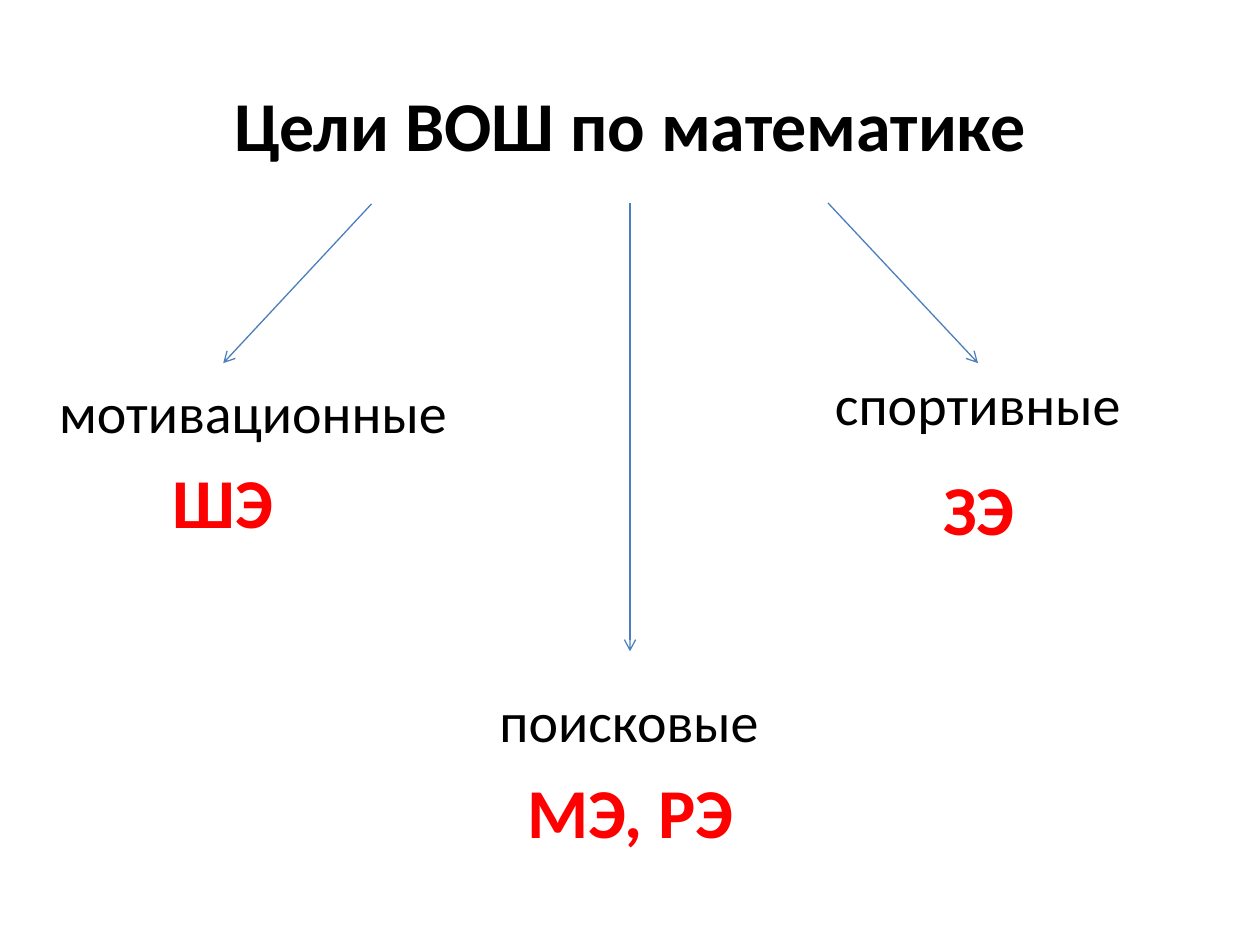
from lxml.etree import SubElement
from pptx import Presentation
from pptx.dml.color import RGBColor
from pptx.enum.shapes import MSO_CONNECTOR as Connector
from pptx.enum.text import MSO_ANCHOR as Anchor, MSO_AUTO_SIZE as AutoSize, PP_ALIGN as Align
from pptx.oxml.ns import qn
from pptx.util import Cm, Pt

BLACK, RED, BLUE = "000000", "FF0000", "4B7EBC"
TOP, BOTTOM = 0, 2

# Goal, its box (left, top, width), then its stage with that box's left and top
GOALS = [
    ("поисковые", (9.09, 13.72, 7.19), "МЭ, РЭ", (9.3, 15.37)),
    ("мотивационные", (0.71, 7.49, 8.79), "ШЭ", (1.09, 9.12)),
    ("спортивные", (16.31, 7.32, 6.81), "ЗЭ", (16.33, 9.25)),
]
STAGE_WIDTH = 6.81


def rgb(hex_color):
    return RGBColor.from_string(hex_color)


def write(frame, text, size=32, color=BLACK, bold=False):
    paragraph = frame.paragraphs[0]
    paragraph.alignment = Align.CENTER
    run = paragraph.add_run()
    run.text = text
    run.font.name = "Calibri"
    run.font.size = Pt(size)
    run.font.bold = bold
    run.font.color.rgb = rgb(color)


def add_title(slide, text):
    title = slide.shapes.title
    title.left, title.top, title.width, title.height = Cm(1.27), Cm(0.91), Cm(22.86), Cm(3.18)
    title.text_frame.vertical_anchor = Anchor.MIDDLE
    write(title.text_frame, text, size=40, bold=True)
    return title


def add_label(slide, text, left, top, width, height, **text_format):
    label = slide.shapes.add_textbox(Cm(left), Cm(top), Cm(width), Cm(height))
    label.text_frame.word_wrap = True
    label.text_frame.auto_size = AutoSize.SHAPE_TO_FIT_TEXT
    write(label.text_frame, text, **text_format)
    return label


def add_arrow(slide, start, end):
    arrow = slide.shapes.add_connector(Connector.STRAIGHT, *map(Cm, start + end))
    arrow.line.color.rgb = rgb(BLUE)
    arrow.line.width = Pt(0.75)
    SubElement(arrow.line._get_or_add_ln(), qn("a:tailEnd"), type="arrow")
    SubElement(arrow._element.spPr, qn("a:effectLst"))
    return arrow


def main():
    deck = Presentation()
    deck.slide_width, deck.slide_height = Cm(25.4), Cm(19.05)
    slide = deck.slides.add_slide(deck.slide_layouts[5])

    title = add_title(slide, "Цели ВОШ по математике")
    goal_labels = {}
    for goal, goal_box, stage, stage_corner in GOALS:
        goal_labels[goal] = add_label(slide, goal, *goal_box, 1.63)
        add_label(slide, stage, *stage_corner, STAGE_WIDTH, 1.96,
                  size=40, color=RED, bold=True)

    add_arrow(slide, (7.49, 4.11), (4.5, 7.32))
    to_search = add_arrow(slide, (12.7, 4.09), (12.7, 13.13))
    to_search.begin_connect(title, BOTTOM)
    to_sport = add_arrow(slide, (16.69, 4.09), (19.71, 7.32))
    to_sport.end_connect(goal_labels["спортивные"], TOP)

    deck.save("out.pptx")


if __name__ == "__main__":
    main()
